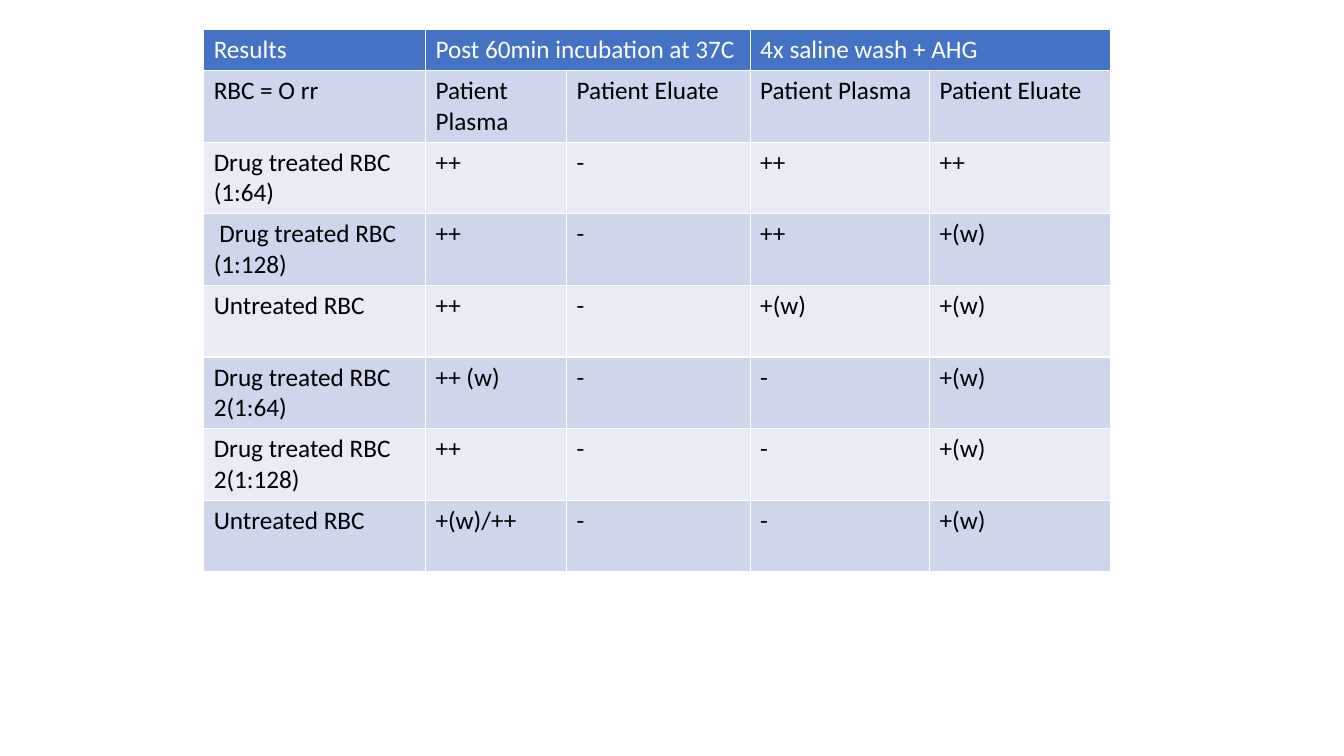
from pptx import Presentation
from pptx.dml.color import RGBColor
from pptx.util import Inches, Pt

HEADER_BLUE = RGBColor(0x44, 0x72, 0xC4)
BAND_DARK = RGBColor(0xCF, 0xD5, 0xEA)
BAND_LIGHT = RGBColor(0xE9, 0xEB, 0xF5)
WHITE = RGBColor(0xFF, 0xFF, 0xFF)
BLACK = RGBColor(0x00, 0x00, 0x00)

RESULTS = [
    ("Results", "Post 60min incubation at 37C", "", "4x saline wash + AHG", ""),
    ("RBC = O rr", "Patient Plasma", "Patient Eluate", "Patient Plasma", "Patient Eluate"),
    ("Drug treated RBC (1:64)", "++", "-", "++", "++"),
    (" Drug treated RBC (1:128)", "++", "-", "++", "+(w)"),
    ("Untreated RBC", "++", "-", "+(w)", "+(w)"),
    ("Drug treated RBC 2(1:64)", "++ (w)", "-", "-", "+(w)"),
    ("Drug treated RBC 2(1:128)", "++", "-", "-", "+(w)"),
    ("Untreated RBC", "+(w)/++", "-", "-", "+(w)"),
]
COLUMN_WIDTHS = (2.2, 1.4, 1.82, 1.78, 1.8)
HEADER_HEIGHT, BODY_HEIGHT = 0.41, 0.71
TABLE_LEFT, TABLE_TOP = 2.02, 0.29
MERGED_HEADER_STARTS = (1, 3)


def format_cell(cell, fill_color, font_color):
    cell.fill.solid()
    cell.fill.fore_color.rgb = fill_color
    for run in cell.text_frame.paragraphs[0].runs:
        run.font.name = "Calibri"
        run.font.size = Pt(18)
        run.font.bold = False
        run.font.color.rgb = font_color


def add_results_table(slide):
    row_heights = [HEADER_HEIGHT] + [BODY_HEIGHT] * (len(RESULTS) - 1)
    table = slide.shapes.add_table(
        len(RESULTS), len(COLUMN_WIDTHS), Inches(TABLE_LEFT), Inches(TABLE_TOP),
        Inches(sum(COLUMN_WIDTHS)), Inches(sum(row_heights))).table
    for column, width in zip(table.columns, COLUMN_WIDTHS):
        column.width = Inches(width)
    for row, height in zip(table.rows, row_heights):
        row.height = Inches(height)

    for row_index, texts in enumerate(RESULTS):
        if row_index == 0:
            fill_color, font_color = HEADER_BLUE, WHITE
        else:
            fill_color = BAND_DARK if row_index % 2 else BAND_LIGHT
            font_color = BLACK
        for column_index, text in enumerate(texts):
            cell = table.cell(row_index, column_index)
            cell.text_frame.text = text
            format_cell(cell, fill_color, font_color)

    for start in MERGED_HEADER_STARTS:
        table.cell(0, start).merge(table.cell(0, start + 1))


def main():
    presentation = Presentation()
    presentation.slide_width = Inches(13.33)
    presentation.slide_height = Inches(7.5)
    blank_layout = presentation.slide_layouts[6]
    add_results_table(presentation.slides.add_slide(blank_layout))
    presentation.save("out.pptx")


if __name__ == "__main__":
    main()
